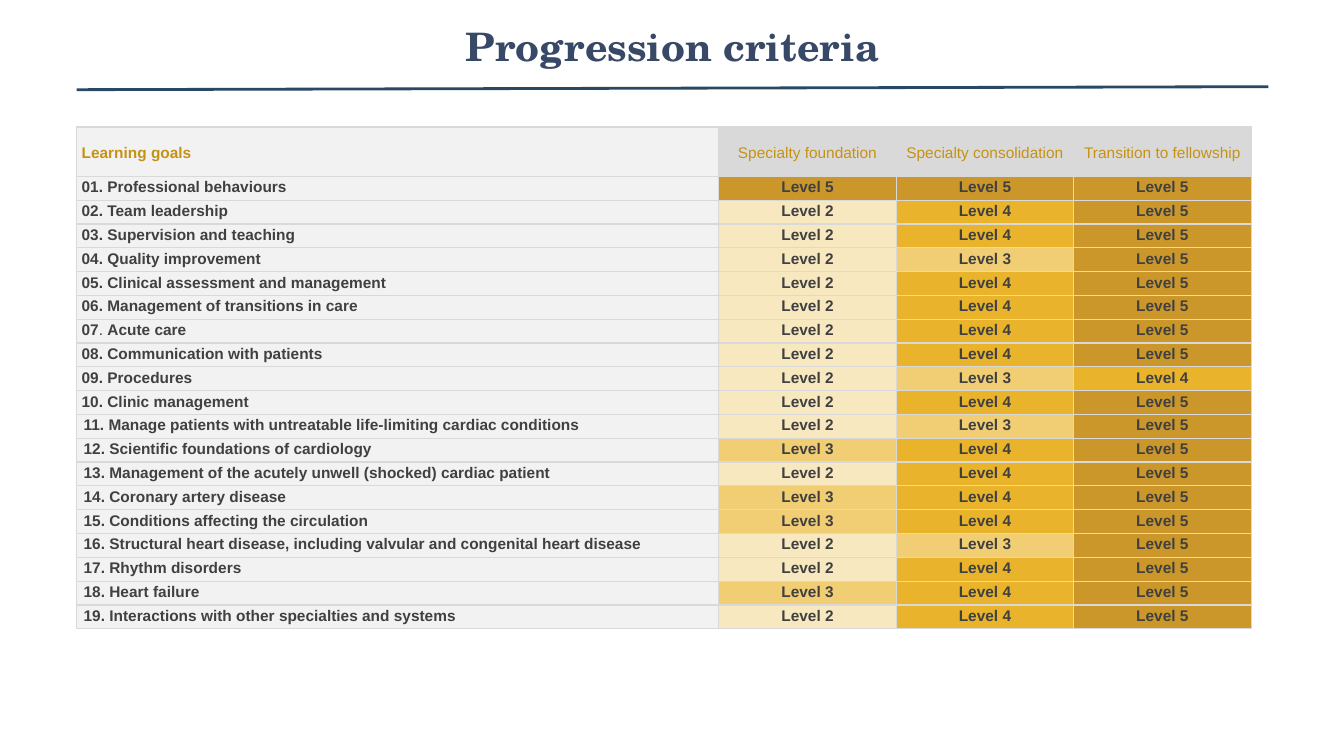
from lxml import etree
from pptx import Presentation
from pptx import util as u
from pptx.dml.color import RGBColor
from pptx.enum import shapes, text
from pptx.oxml.ns import qn

SANS, SERIF = "Arial", "TeX Gyre Schola"
GOLD, DARK, GREY, PALE = "C69214", "404040", "D9D9D9", "F2F2F2"
LEVEL_FILLS = {"2": "F8E8C0", "3": "F1CD73", "4": "E9B32B", "5": "CB972B"}

HEADINGS = ["Learning goals", "Specialty foundation",
            "Specialty consolidation", "Transition to fellowship"]
# Goal, then its level at each of the three stages; | switches bold off and on
GOALS = [
    ("01. Professional behaviours", "555"),
    ("02. Team leadership", "245"),
    ("03. Supervision and teaching", "245"),
    ("04. Quality improvement", "235"),
    ("05. Clinical assessment and management", "245"),
    ("06. Management of transitions in care", "245"),
    ("07|. |Acute care", "245"),
    ("08. Communication with patients", "245"),
    ("09. Procedures", "234"),
    ("10. Clinic management", "245"),
    ("11. Manage patients with untreatable life-limiting cardiac conditions", "235"),
    ("12. Scientific foundations of cardiology", "345"),
    ("13. Management of the acutely unwell (shocked) cardiac patient", "245"),
    ("14. Coronary artery disease", "345"),
    ("15. Conditions affecting the circulation", "345"),
    ("16. Structural heart disease, including valvular and congenital heart disease", "235"),
    ("17. Rhythm disorders", "245"),
    ("18. Heart failure", "345"),
    ("19. Interactions with other specialties and systems", "245"),
]
FIRST_SPECIALTY_GOAL = 11
TABLE_HEIGHT, HEADER_HEIGHT = 4.98, 0.49
GOAL_WIDTH, STAGE_WIDTH = 6.37, 1.76


def color(value):
    return RGBColor.from_string(value)


def write_text(frame, words, size=11, font=SANS, fill=DARK, bold=True,
               centered=False, line_spacing=1.0):
    paragraph = frame.paragraphs[0]
    paragraph.alignment = text.PP_ALIGN.CENTER if centered else text.PP_ALIGN.LEFT
    paragraph.line_spacing = line_spacing
    for index, part in enumerate(words.split("|")):
        run = paragraph.add_run()
        run.text = part
        run.font.size = u.Pt(size)
        run.font.name = font
        run.font.bold = bold and index % 2 == 0
        run.font.color.rgb = color(fill)


def add_title(slide, words):
    box = slide.shapes.add_textbox(u.Inches(2.17), u.Inches(0.17),
                                   u.Inches(9), u.Inches(1.25))
    box.text_frame.word_wrap = True
    write_text(box.text_frame, words, size=28, font=SERIF, fill="384967", centered=True)


def add_rule(slide):
    rule = slide.shapes.add_connector(shapes.MSO_CONNECTOR.STRAIGHT, u.Inches(0.76),
                                      u.Inches(0.89), u.Inches(12.58), u.Inches(0.86))
    rule.line.color.rgb = color("294864")
    rule.line.width = u.Pt(2)
    etree.SubElement(rule._element.spPr, qn("a:effectLst"))


def add_borders(cell, line_color):
    properties = cell._tc.get_or_add_tcPr()
    for side in ("a:lnL", "a:lnR", "a:lnT", "a:lnB"):
        line = etree.SubElement(properties, qn(side), w=str(u.Pt(1)))
        fill = etree.SubElement(line, qn("a:solidFill"))
        etree.SubElement(fill, qn("a:srgbClr"), val=line_color)


def fill_cell(cell, words, background, inset=0.05, middle=False, **text_format):
    cell.margin_left = cell.margin_right = u.Inches(inset)
    cell.margin_top = cell.margin_bottom = 0
    cell.vertical_anchor = text.MSO_ANCHOR.MIDDLE if middle else text.MSO_ANCHOR.TOP
    add_borders(cell, GREY)
    cell.fill.solid()
    cell.fill.fore_color.rgb = color(background)
    write_text(cell.text_frame, words, line_spacing=1.15, **text_format)


def add_criteria_table(slide):
    width = GOAL_WIDTH + 3 * STAGE_WIDTH
    frame = slide.shapes.add_table(len(GOALS) + 1, len(HEADINGS), u.Inches(0.76),
                                   u.Inches(1.26), u.Inches(width), u.Inches(TABLE_HEIGHT))
    table = frame.table
    table.first_row = table.horz_banding = False
    for index, column in enumerate(table.columns):
        column.width = u.Inches(STAGE_WIDTH if index else GOAL_WIDTH)
    goal_height = (TABLE_HEIGHT - HEADER_HEIGHT) / len(GOALS)
    for index, row in enumerate(table.rows):
        row.height = u.Inches(goal_height if index else HEADER_HEIGHT)

    # Header row
    for index, heading in enumerate(HEADINGS):
        fill_cell(table.cell(0, index), heading, GREY if index else PALE, middle=True,
                  fill=GOLD, bold=index == 0, centered=index > 0)

    # One row for each goal
    for number, (goal, levels) in enumerate(GOALS, start=1):
        inset = 0.07 if number >= FIRST_SPECIALTY_GOAL else 0.05
        fill_cell(table.cell(number, 0), goal, PALE, inset=inset)
        for stage, level in enumerate(levels, start=1):
            fill_cell(table.cell(number, stage), f"Level {level}",
                      LEVEL_FILLS[level], centered=True)


def main():
    presentation = Presentation()
    presentation.slide_width = u.Inches(13.33)
    presentation.slide_height = u.Inches(7.5)
    slide = presentation.slides.add_slide(presentation.slide_layouts[6])
    add_title(slide, "Progression criteria")
    add_rule(slide)
    add_criteria_table(slide)
    presentation.save("out.pptx")


if __name__ == "__main__":
    main()
